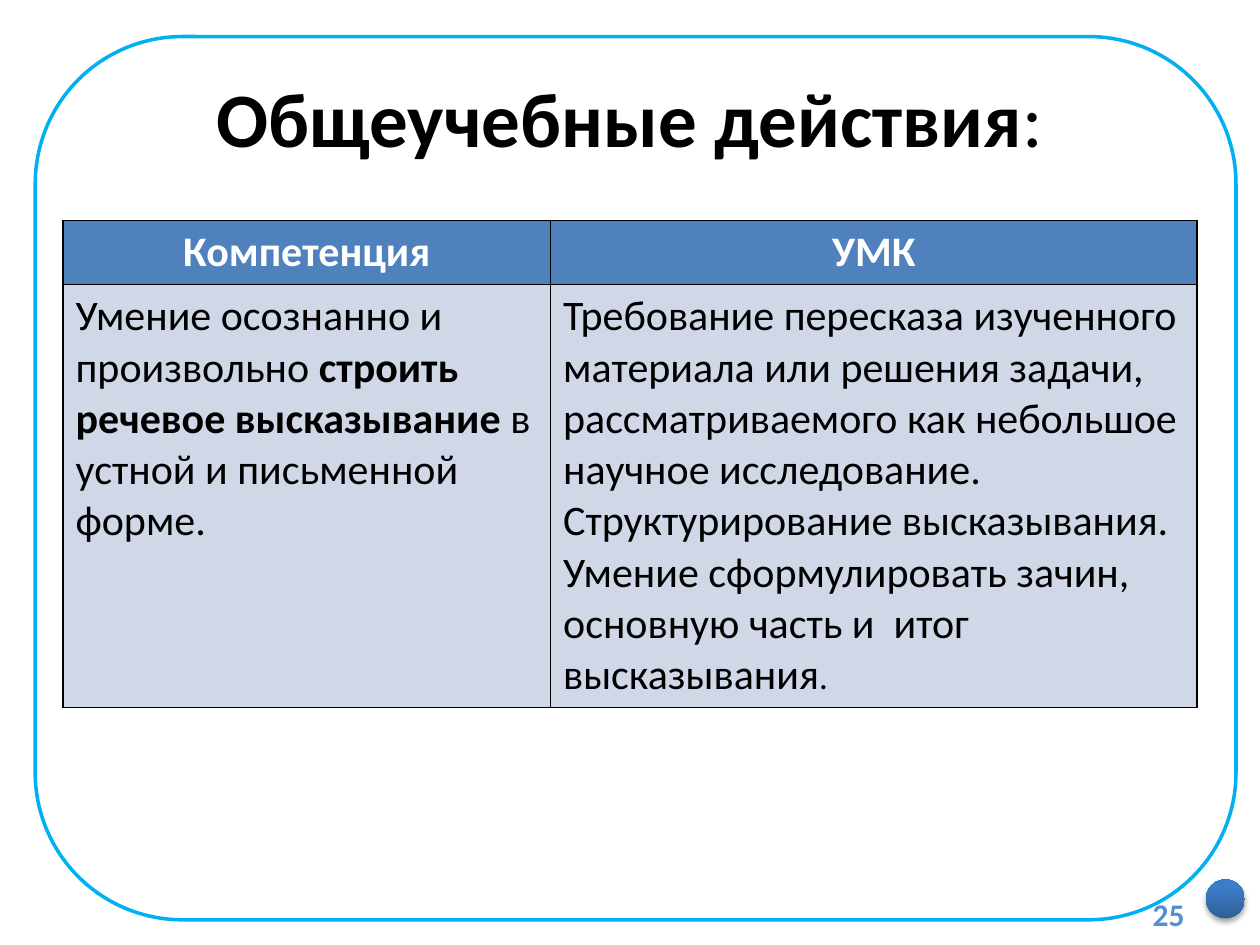
from copy import deepcopy

from lxml import etree
from pptx import Presentation
from pptx.dml.color import RGBColor
from pptx.enum import shapes, text
from pptx.oxml import parse_xml
from pptx.oxml.ns import qn
from pptx.util import Inches, Pt

FONT = "Calibri"
COLORS = {
    "frame": "00B0F0",
    "text": "000000",
    "header": "4F81BD",
    "header_text": "FFFFFF",
    "body": "D0D8E8",
    "border": "000000",
    "number": "558ED5",
}
BALL_STOPS = [(0, "2F5F99"), (0.8, "3D7CC7"), (1, "3A7CCB")]

# Runs are (text, size, bold)
TITLE = [("Общеучебные действия", 44, True), (":", 44, False)]
HEADERS = ["Компетенция", "УМК"]
SKILL = [
    ("Умение осознанно и произвольно ", 24, False),
    ("строить речевое высказывание", 24, True),
    (" в устной и письменной форме.", 24, False),
]
MATERIALS = [
    ("Требование пересказа изученного материала или решения задачи, "
     "рассматриваемого как небольшое научное исследование. "
     "Структурирование высказывания. Умение сформулировать зачин, "
     "основную часть и  итог высказывания", 24, False),
    (".", 20, False),
]
ROWS = [[[(header, 24, True)] for header in HEADERS], [SKILL, MATERIALS]]
COLUMN_WIDTHS = [3.87, 5.13]
ROW_HEIGHTS = [0.51, 3.35]


def rgb(name):
    return RGBColor.from_string(COLORS[name])


def box(left, top, width, height):
    return [Inches(length) for length in (left, top, width, height)]


def write(frame, runs, color, align):
    paragraph = frame.paragraphs[0]
    paragraph.alignment = align
    for wording, size, bold in runs:
        run = paragraph.add_run()
        run.text = wording
        run.font.name = FONT
        run.font.size = Pt(size)
        run.font.bold = bold
        run.font.color.rgb = rgb(color)


def add_borders(cell):
    properties = cell._tc.get_or_add_tcPr()
    for index, side in enumerate(("lnL", "lnR", "lnT", "lnB")):
        line = etree.Element(qn(f"a:{side}"), w=str(Pt(1)))
        fill = etree.SubElement(line, qn("a:solidFill"))
        etree.SubElement(fill, qn("a:srgbClr"), val=COLORS["border"])
        properties.insert(index, line)


def add_frame(slide):
    frame = slide.shapes.add_shape(
        shapes.MSO_SHAPE.ROUNDED_RECTANGLE, *box(0.28, 0.29, 9.53, 7.01))
    frame.shadow.inherit = False
    frame.fill.background()
    frame.line.color.rgb = rgb("frame")
    frame.line.width = Pt(2)


def add_ball(slide):
    ball = slide.shapes.add_shape(
        shapes.MSO_SHAPE.OVAL, *box(9.57, 6.98, 0.31, 0.31))
    ball.line.fill.background()
    ball.fill.gradient()
    ball.fill.gradient_angle = 90
    stop_list = ball._element.spPr.find(f".//{qn('a:gsLst')}")
    stop_list.append(deepcopy(stop_list[-1]))
    for stop, (position, color) in zip(ball.fill.gradient_stops, BALL_STOPS):
        stop.position = position
        stop.color.rgb = RGBColor.from_string(color)
    ball.shadow.inherit = False
    ball._element.spPr.find(qn("a:effectLst")).append(parse_xml(
        '<a:outerShdw xmlns:a="http://schemas.openxmlformats.org/drawingml/2006/main"'
        f' blurRad="{Pt(3.1)}" dist="{Pt(1.8)}" dir="5400000" rotWithShape="0">'
        '<a:srgbClr val="000000"><a:alpha val="35000"/></a:srgbClr></a:outerShdw>'))


def add_title(slide):
    title = slide.shapes.title
    title.left, title.top, title.width, title.height = box(0.5, 0.3, 9, 1.25)
    title.text_frame.vertical_anchor = text.MSO_ANCHOR.MIDDLE
    write(title.text_frame, TITLE, "text", text.PP_ALIGN.CENTER)
    slide.shapes._spTree.append(title._element)  # in front of the frame


def add_skills_table(slide):
    table = slide.shapes.add_table(
        len(ROWS), len(COLUMN_WIDTHS),
        *box(0.5, 1.75, sum(COLUMN_WIDTHS), sum(ROW_HEIGHTS))).table
    for column, width in zip(table.columns, COLUMN_WIDTHS):
        column.width = Inches(width)
    for r, (contents, height) in enumerate(zip(ROWS, ROW_HEIGHTS)):
        table.rows[r].height = Inches(height)
        fill, color, align = (
            ("body", "text", text.PP_ALIGN.LEFT) if r
            else ("header", "header_text", text.PP_ALIGN.CENTER))
        for c, runs in enumerate(contents):
            cell = table.cell(r, c)
            cell.fill.solid()
            cell.fill.fore_color.rgb = rgb(fill)
            add_borders(cell)
            write(cell.text_frame, runs, color, align)


def add_page_number(slide):
    number = slide.shapes.add_textbox(*box(8.94, 7.05, 0.56, 0.4)).text_frame
    number.word_wrap = True
    number.vertical_anchor = text.MSO_ANCHOR.MIDDLE
    write(number, [("25", 18, True)], "number", text.PP_ALIGN.RIGHT)


def main():
    deck = Presentation()
    deck.slide_width, deck.slide_height = Inches(10), Inches(7.5)
    slide = deck.slides.add_slide(deck.slide_layouts.get_by_name("Title Only"))
    add_frame(slide)
    add_ball(slide)
    add_title(slide)
    add_skills_table(slide)
    add_page_number(slide)
    deck.save("out.pptx")


if __name__ == "__main__":
    main()
